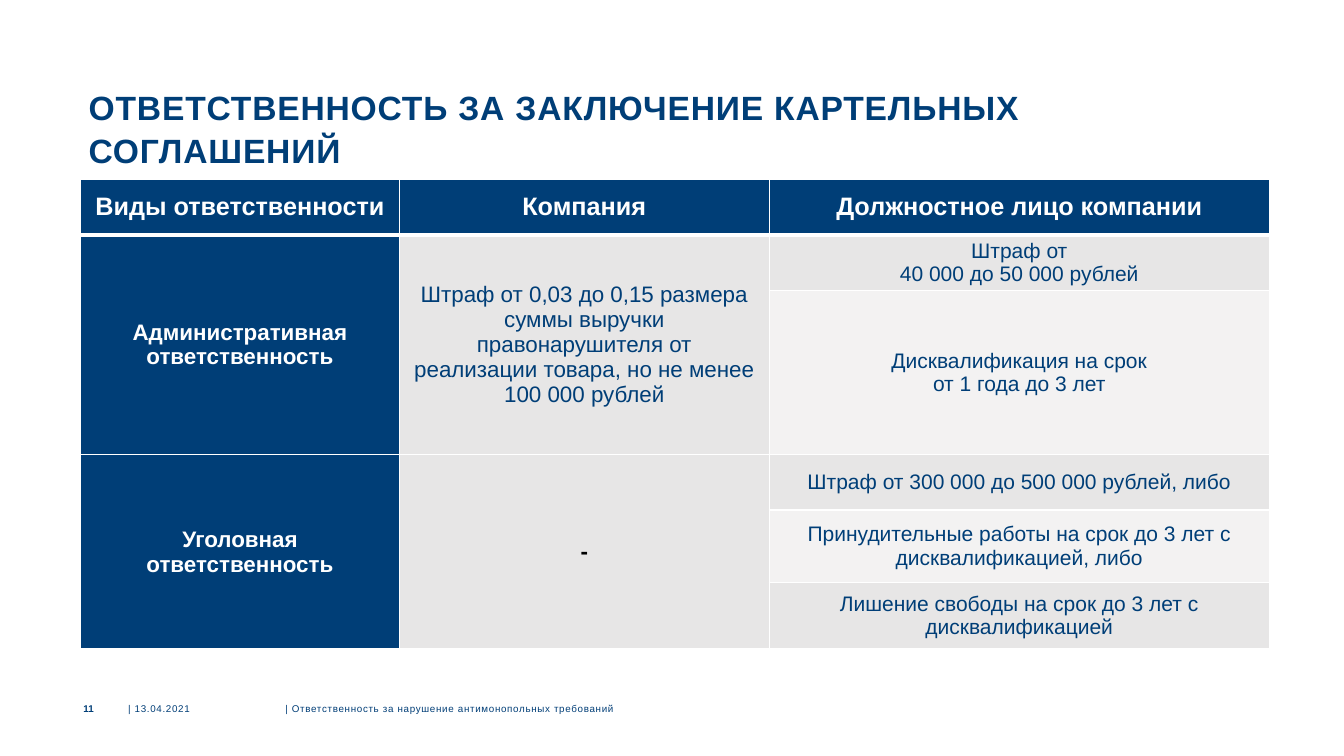
from lxml import etree
from pptx import Presentation
from pptx.dml.color import RGBColor
from pptx.enum.text import MSO_ANCHOR as Anchor, PP_ALIGN as Align
from pptx.oxml.ns import qn
from pptx.util import Inches, Pt

NAVY, WHITE, BLACK = "003E77", "FFFFFF", "000000"
GRAY, LIGHT_GRAY = "E7E6E6", "F3F2F2"

COLUMN_WIDTHS = [3.16, 3.67, 4.96]
ROW_HEIGHTS = [0.55, 0.55, 1.63, 0.55, 0.72, 0.66]
HEADINGS = ["Виды ответственности", "Компания", "Должностное лицо компании"]
LIABILITIES = [
    ("Административная ответственность",
     "Штраф от 0,03 до 0,15 размера суммы выручки правонарушителя от "
     "реализации товара, но не менее 100 000 рублей",
     ["Штраф от\n40 000 до 50 000 рублей",
      "Дисквалификация на срок\nот 1 года до 3 лет"]),
    ("Уголовная ответственность", "-",
     ["Штраф от 300 000 до 500 000 рублей, либо",
      "Принудительные работы на срок до 3 лет с дисквалификацией, либо",
      "Лишение свободы на срок до 3 лет с дисквалификацией"]),
]


def rgb(value):
    return RGBColor.from_string(value)


def style(paragraph, size, color, bold=False, align=Align.LEFT, tracking=0):
    """Set the look of a paragraph; tracking is in points."""
    paragraph.alignment = align
    font = paragraph.font
    font.name, font.size, font.bold = "Arial", Pt(size), bold
    font.color.rgb = rgb(color)
    if tracking:
        font._rPr.set("spc", str(round(tracking * 100)))


def add_label(slide, box, text, size, anchor=Anchor.MIDDLE, insets=(0, 0), **look):
    """Add a one-paragraph text box; insets are horizontal, vertical."""
    frame = slide.shapes.add_textbox(*map(Inches, box)).text_frame
    frame.word_wrap = True
    frame.vertical_anchor = anchor
    frame.margin_left = frame.margin_right = Inches(insets[0])
    frame.margin_top = frame.margin_bottom = Inches(insets[1])
    paragraph = frame.paragraphs[0]
    paragraph.text = text
    style(paragraph, size, NAVY, **look)
    return paragraph


def add_title(slide, left, top, width, height):
    title = add_label(slide, (left, top, width, height),
                      "ОТВЕТСТВЕННОСТЬ ЗА ЗАКЛЮЧЕНИЕ КАРТЕЛЬНЫХ СОГЛАШЕНИЙ", 24,
                      Anchor.TOP, (0.09, 0.04), bold=True, tracking=0.6)
    title.line_spacing = Pt(31)


def set_borders(cell, **widths):
    """Draw white cell borders, with widths in points by side (L, R, T, B)."""
    properties = cell._tc.get_or_add_tcPr()
    for side, width in widths.items():
        line = etree.SubElement(properties, qn(f"a:ln{side}"), w=str(Pt(width)))
        fill = etree.SubElement(line, qn("a:solidFill"))
        etree.SubElement(fill, qn("a:srgbClr"), val=WHITE)


def fill_cell(cell, text, fill, size, color, bold=False):
    cell.fill.solid()
    cell.fill.fore_color.rgb = rgb(fill)
    cell.vertical_anchor = Anchor.MIDDLE
    cell.margin_left = cell.margin_right = Inches(0.13)
    cell.margin_top = cell.margin_bottom = 0
    cell.text_frame.text = text
    for paragraph in cell.text_frame.paragraphs:
        style(paragraph, size, color, bold, Align.CENTER)


def add_liability_table(slide, left, top):
    width, height = sum(COLUMN_WIDTHS), sum(ROW_HEIGHTS)
    table = slide.shapes.add_table(
        len(ROW_HEIGHTS), len(COLUMN_WIDTHS),
        *map(Inches, (left, top, width, height))).table
    for column, column_width in zip(table.columns, COLUMN_WIDTHS):
        column.width = Inches(column_width)
    for index, (row, row_height) in enumerate(zip(table.rows, ROW_HEIGHTS)):
        row.height = Inches(row_height)
        for cell in row.cells:
            set_borders(cell, L=1, R=1, T=3 if index == 1 else 1,
                        B=3 if index == 0 else 1)

    for column, heading in enumerate(HEADINGS):
        fill_cell(table.cell(0, column), heading, NAVY, 18, WHITE, True)

    first = 1
    for kind, company, penalties in LIABILITIES:
        last = first + len(penalties) - 1
        for column in (0, 1):
            table.cell(first, column).merge(table.cell(last, column))
        fill_cell(table.cell(first, 0), kind, NAVY, 16, WHITE, True)
        no_penalty = company == "-"
        fill_cell(table.cell(first, 1), company, GRAY, 16,
                  BLACK if no_penalty else NAVY, no_penalty)
        for index, penalty in enumerate(penalties):
            shade = LIGHT_GRAY if index % 2 else GRAY
            fill_cell(table.cell(first + index, 2), penalty, shade, 15, NAVY)
        first = last + 1


def add_footer(slide, left, top, height):
    add_label(slide, (left, top, 0.14, height), "11", 7, bold=True, align=Align.RIGHT)
    add_label(slide, (left + 0.48, top, 1.53, height), "| 13.04.2021", 7, tracking=0.5)
    add_label(slide, (left + 2.04, top, 5.88, height),
              "| Ответственность за нарушение антимонопольных требований", 7,
              tracking=0.5)


def main():
    presentation = Presentation()
    presentation.slide_width = Inches(13.33)
    presentation.slide_height = Inches(7.5)
    slide = presentation.slides.add_slide(presentation.slide_layouts[6])
    add_title(slide, 0.79, 0.79, 11.76, 0.87)
    add_liability_table(slide, 0.8, 1.78)
    add_footer(slide, 0.79, 6.95, 0.16)
    presentation.save("out.pptx")


if __name__ == "__main__":
    main()
